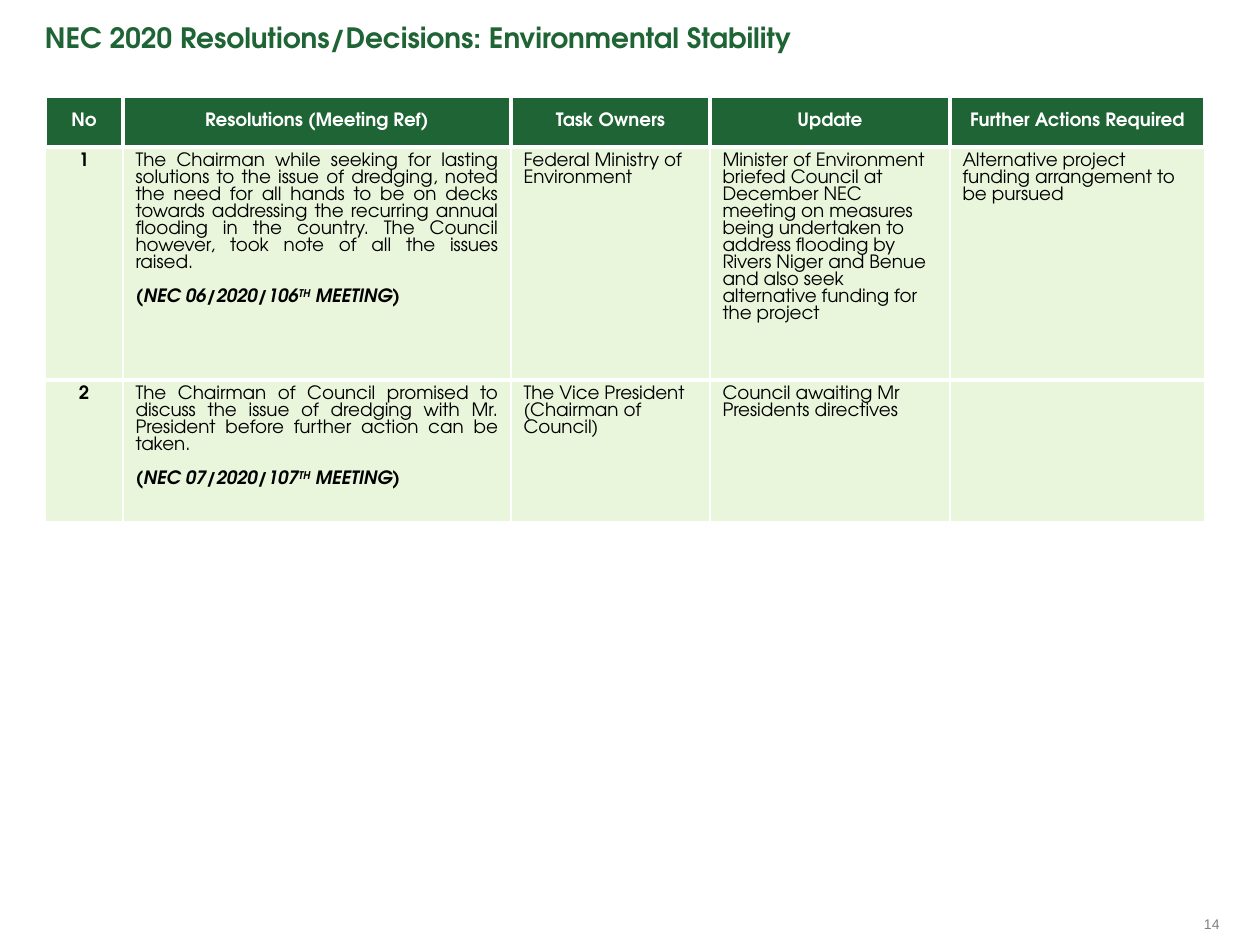
"""Build the NEC 2020 environmental stability resolutions slide."""
from lxml.etree import SubElement
from pptx import Presentation
from pptx.dml.color import RGBColor
from pptx.enum.text import MSO_ANCHOR, PP_ALIGN
from pptx.oxml.ns import qn
from pptx.util import Pt

PX = 914400 // 126
COLORS = {"green": "1E6434", "pale": "E9F6DC", "white": "FFFFFF", "black": "000000", "gray": "808080"}
FONT = "TeX Gyre Adventor"
TITLE = "NEC 2020 Resolutions/Decisions: Environmental Stability"
PAGE = "14"
HEADERS = ["No", "Resolutions (Meeting Ref)", "Task Owners", "Update", "Further Actions Required"]
ROWS = [
    ["1",
     "The Chairman while seeking for lasting solutions to the issue of dredging, noted the need for "
     "all hands to be on decks towards addressing the recurring annual flooding in the country. "
     "The Council however, took note of all the issues raised.",
     "Federal Ministry of Environment",
     "Minister of Environment briefed Council at December NEC meeting on measures being undertaken "
     "to address flooding by Rivers Niger and Benue and also seek alternative funding for the project",
     "Alternative project funding arrangement to be pursued"],
    ["2",
     "The Chairman of Council promised to discuss the issue of dredging with Mr. President before "
     "further action can be taken.",
     "The Vice President (Chairman of Council)",
     "Council awaiting Mr Presidents directives",
     ""],
]
MEETINGS = ["(NEC 06/2020/106", "(NEC 07/2020/107"]
COL_WIDTHS = [78, 388, 199, 240, 255]
ROW_HEIGHTS = [51, 233, 143]
TABLE_LEFT, TABLE_TOP = 45, 96
BODY = {"size": Pt(10.5), "name": FONT, "bold": False, "italic": False}
STRONG = BODY | {"bold": True}
REF = STRONG | {"italic": True}


def set_font(font, fmt, color):
    for key, value in fmt.items():
        setattr(font, key, value)
    font.color.rgb = RGBColor.from_string(COLORS[color])


def add_run(p, text, fmt, color):
    r = p.add_run()
    r.text = text
    set_font(r.font, fmt, color)
    return r


def add_label(s, box, text, fmt, color, wrap):
    tf = s.shapes.add_textbox(*(v * PX for v in box)).text_frame
    for key in ("margin_left", "margin_top", "margin_right", "margin_bottom"):
        setattr(tf, key, 0)
    tf.word_wrap = wrap
    add_run(tf.paragraphs[0], text, fmt, color)
    return tf


def set_borders(cell, widths):
    tcPr = cell._tc.get_or_add_tcPr()
    for side, width in widths.items():
        ln = SubElement(tcPr, qn(f"a:ln{side}"), w=str(Pt(width)))
        fill = SubElement(ln, qn("a:solidFill"))
        SubElement(fill, qn("a:srgbClr"), val=COLORS["white"])


def format_paragraph(p, align):
    p.alignment = align
    p.line_spacing = Pt(9.7)


def fill_cell(cell, text, row, col):
    header = row == 0
    side = 2.25 if header else 1
    set_borders(cell, {"L": side, "R": side, "T": 2.25, "B": 2.25})
    cell.fill.solid()
    cell.fill.fore_color.rgb = RGBColor.from_string(COLORS["green" if header else "pale"])
    cell.vertical_anchor = MSO_ANCHOR.MIDDLE if header else MSO_ANCHOR.TOP
    color = "white" if header else "black"
    fmt = STRONG if header or col == 0 else BODY
    align = PP_ALIGN.CENTER if header or col == 0 else PP_ALIGN.JUSTIFY if col == 1 else PP_ALIGN.LEFT
    p = cell.text_frame.paragraphs[0]
    format_paragraph(p, align)
    if text:
        add_run(p, text, fmt, color)
    else:
        set_font(p.font, fmt, color)
    if col == 1 and not header:
        p = cell.text_frame.add_paragraph()
        format_paragraph(p, align)
        p.space_before = Pt(9.7)
        add_run(p, MEETINGS[row - 1], REF, color)
        add_run(p, "TH", REF, color).font._element.set("baseline", "30000")
        add_run(p, " MEETING)", REF, color)


def add_resolutions(s):
    frame = s.shapes.add_table(len(ROW_HEIGHTS), len(COL_WIDTHS), TABLE_LEFT * PX, TABLE_TOP * PX,
                               sum(COL_WIDTHS) * PX, sum(ROW_HEIGHTS) * PX)
    table = frame.table
    table.horz_banding = False
    for column, width in zip(table.columns, COL_WIDTHS):
        column.width = width * PX
    for row, height in zip(table.rows, ROW_HEIGHTS):
        row.height = height * PX
    for i, texts in enumerate([HEADERS] + ROWS):
        for j, text in enumerate(texts):
            fill_cell(table.cell(i, j), text, i, j)


def main():
    prs = Presentation()
    prs.slide_width, prs.slide_height = 1260 * PX, 945 * PX
    s = prs.slides.add_slide(prs.slide_layouts[6])
    tf = add_label(s, (1204, 915, 18, 18), PAGE, {"size": Pt(8), "name": "Arial"}, "gray", False)
    tf.vertical_anchor = MSO_ANCHOR.MIDDLE
    add_resolutions(s)
    add_label(s, (45, 21, 1131, 34), TITLE, {"size": Pt(16), "name": FONT, "bold": True}, "green", True)
    prs.save("out.pptx")


if __name__ == "__main__":
    main()
